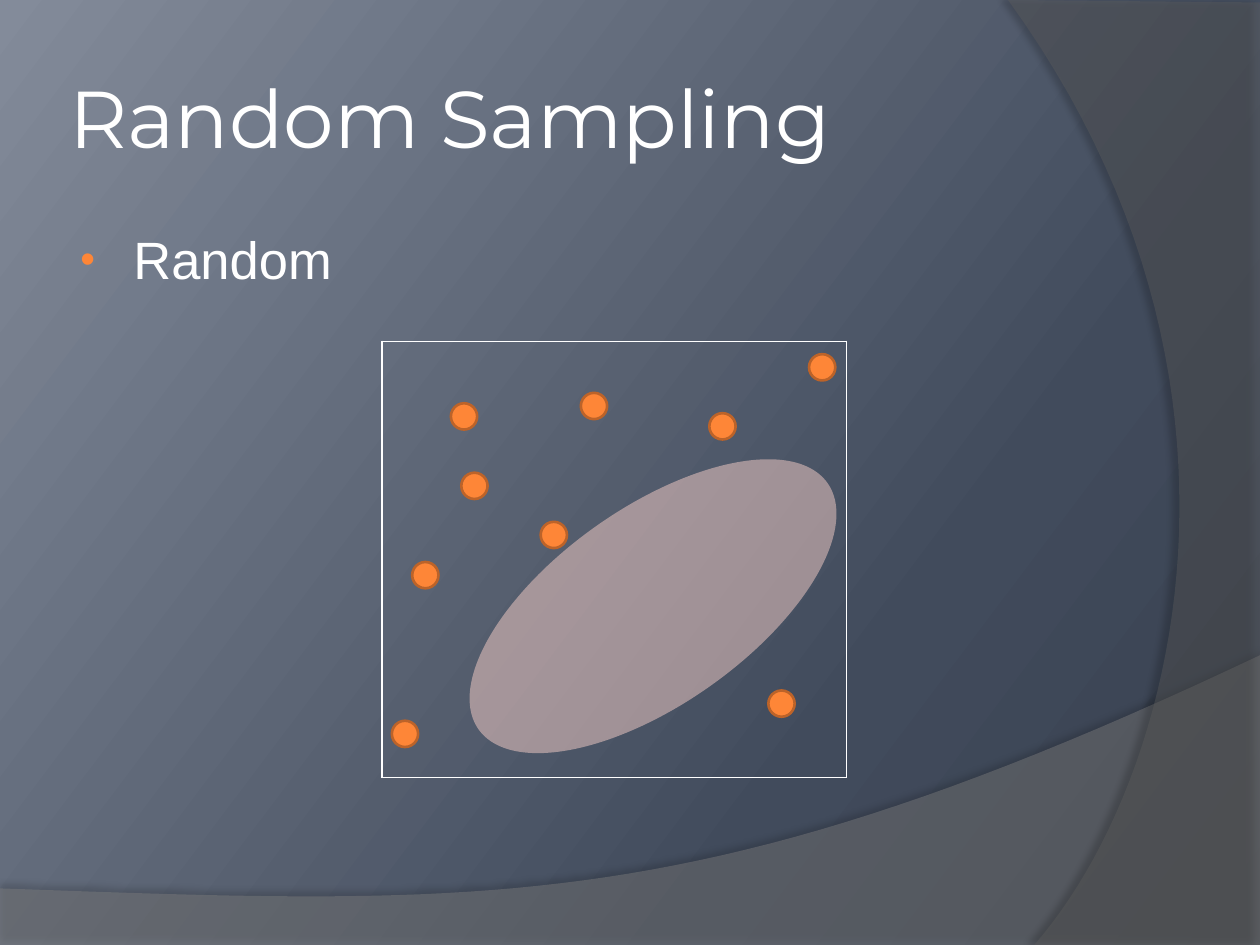
from lxml import etree
from pptx import Presentation
from pptx.dml.color import RGBColor
from pptx.enum.shapes import MSO_SHAPE
from pptx.enum.text import MSO_ANCHOR
from pptx.oxml.ns import qn
from pptx.util import Cm, Pt

OVAL = MSO_SHAPE.OVAL
TOP, MIDDLE = MSO_ANCHOR.TOP, MSO_ANCHOR.MIDDLE
PLAIN_TABLE_STYLE = "{2D5ABB26-0587-4C30-8999-92F81FD0307C}"
WHITE, ORANGE, DARK_ORANGE, PINK = "FFFFFF", "FE8637", "BC6329", "F8CFC8"
BACKGROUND_STOPS = [(0, "373F4D"), (30, "414B5C"), (100, "838B9A")]
DOT_SIZE = 0.53
DOTS = [
    (10.9, 10.52), (9.09, 8.13), (14.3, 8.33), (9.3, 9.53), (16.31, 7.14),
    (7.9, 14.53), (8.31, 11.33), (15.49, 13.92), (11.71, 7.92),
]


def rgb(color):
    """Turn a hex string into a colour."""
    return RGBColor.from_string(color)


def add_element(parent, tag, **attributes):
    """Append an XML element with the given attributes."""
    values = {name: str(value) for name, value in attributes.items()}
    return etree.SubElement(parent, qn(tag), values)


def add_color(parent, color, opacity=100):
    """Append a colour element, with its opacity in percent."""
    element = add_element(parent, "a:srgbClr", val=color)
    if opacity < 100:
        add_element(element, "a:alpha", val=opacity * 1000)


def set_background(slide, stops, angle):
    """Fill the background with a gradient at a clockwise angle."""
    fill = slide.background.fill
    fill.gradient()
    fill.gradient_angle = 360 - angle
    stop_list = next(slide.element.iter(qn("a:gsLst")))
    for stop in list(stop_list):
        stop_list.remove(stop)
    for position, color in stops:
        add_color(add_element(stop_list, "a:gs", pos=position * 1000), color)


def format_shape(shape, fill, opacity=100, line=None, line_width=1.5):
    """Set fill, opacity and outline, and drop the theme shadow."""
    shape.shadow.inherit = False
    shape.fill.solid()
    shape.fill.fore_color.rgb = rgb(fill)
    if opacity < 100:
        color = shape.element.spPr.find(qn("a:solidFill"))[0]
        add_element(color, "a:alpha", val=opacity * 1000)
    if line:
        shape.line.color.rgb = rgb(line)
        shape.line.width = Pt(line_width)
    else:
        shape.line.fill.background()


def curve_points(start, control_1, control_2, end, steps=48):
    """Return points along a cubic curve, without its start."""
    points = []
    for step in range(1, steps + 1):
        t = step / steps
        weights = ((1 - t) ** 3, 3 * t * (1 - t) ** 2, 3 * t * t * (1 - t), t ** 3)
        corners = (start, control_1, control_2, end)
        points.append(tuple(
            sum(weight * corner[axis] for weight, corner in zip(weights, corners))
            for axis in (0, 1)
        ))
    return points


def add_wave(slide, corners, curve, fill, opacity, shadow_opacity, distance, direction):
    """Add a translucent outline closed by a curve, with a soft shadow."""
    points = [
        (Cm(x), Cm(y)) for x, y in corners + curve_points(corners[-1], *curve)
    ]
    builder = slide.shapes.build_freeform(*points[0])
    builder.add_line_segments(points[1:], close=True)
    shape = builder.convert_to_shape()
    format_shape(shape, fill, opacity)
    shadow = add_element(
        shape.element.spPr.find(qn("a:effectLst")), "a:outerShdw",
        blurRad=Pt(4), dist=Pt(distance), dir=direction * 60000,
        algn="ctr", rotWithShape=0,
    )
    add_color(shadow, "000000", shadow_opacity)


def add_oval(slide, left, top, width, height, rotation=0, **look):
    """Add an ellipse."""
    shape = slide.shapes.add_shape(OVAL, Cm(left), Cm(top), Cm(width), Cm(height))
    shape.rotation = rotation
    format_shape(shape, **look)


def add_text(slide, text, left, top, width, height, *, size, font,
             color=WHITE, anchor=TOP, margin=0.25, space_before=0, bullet=None):
    """Add a text box with one paragraph, bulleted if a bullet colour is given."""
    box = slide.shapes.add_textbox(Cm(left), Cm(top), Cm(width), Cm(height))
    frame = box.text_frame
    frame.word_wrap = True
    frame.vertical_anchor = anchor
    frame.margin_left = frame.margin_right = Cm(margin)
    frame.margin_top = frame.margin_bottom = Cm(0.13)
    paragraph = frame.paragraphs[0]
    paragraph.space_before = Pt(space_before)
    run = paragraph.add_run()
    run.text = text
    run.font.size = Pt(size)
    run.font.name = font
    run.font.color.rgb = rgb(color)
    if bullet:
        properties = paragraph._p.get_or_add_pPr()
        properties.set("marL", str(Cm(1.17)))
        properties.set("indent", str(Cm(-1.07)))
        add_color(add_element(properties, "a:buClr"), bullet)
        add_element(properties, "a:buSzPct", val=80000)
        add_element(properties, "a:buFont", typeface=font)
        add_element(properties, "a:buChar", char="•")


def add_border(cell, color, width):
    """Draw a line on all four sides of a cell."""
    properties = cell._tc.get_or_add_tcPr()
    for tag in ("a:lnL", "a:lnR", "a:lnT", "a:lnB"):
        line = add_element(properties, tag, w=Pt(width))
        add_color(add_element(line, "a:solidFill"), color)


def add_frame_table(slide, left, top, column_widths, row_heights):
    """Add an unfilled table whose merged first row frames the sample area."""
    table = slide.shapes.add_table(
        len(row_heights), len(column_widths), Cm(left), Cm(top),
        Cm(sum(column_widths)), Cm(sum(row_heights)),
    ).table
    table.first_row = table.horz_banding = False
    next(table._tbl.iter(qn("a:tableStyleId"))).text = PLAIN_TABLE_STYLE
    for column, width in zip(table.columns, column_widths):
        column.width = Cm(width)
    for row, height in zip(table.rows, row_heights):
        row.height = Cm(height)
    last_column = len(column_widths) - 1
    table.cell(0, 0).merge(table.cell(0, last_column))
    for cell in table.rows[0].cells:
        add_border(cell, WHITE, 1)
    for row in table.rows:
        for cell in row.cells:
            cell.fill.background()


def main():
    """Build the slide and save it."""
    presentation = Presentation()
    presentation.slide_width, presentation.slide_height = Cm(25.4), Cm(19.05)
    slide = presentation.slides.add_slide(presentation.slide_layouts[6])
    set_background(slide, BACKGROUND_STOPS, 217)
    add_wave(
        slide, [(0, 17.91), (0, 19.08), (25.4, 19.08), (25.4, 13.21)],
        [(14.2, 18.52), (9.93, 18.26), (0, 17.91)],
        "7F7F7F", 45, shadow_opacity=35, distance=3.5, direction=270,
    )
    add_wave(
        slide, [(25.4, 0.05), (25.4, 19.05), (20.85, 19.05)],
        [(23.75, 15.72), (25.86, 7.62), (20.32, 0)],
        "5E5E5E", 40, shadow_opacity=45, distance=4, direction=180,
    )
    add_text(slide, "Random Sampling", 1.27, 0.76, 21.82, 3.18,
             size=46, font="Montserrat", anchor=MIDDLE, margin=0.13)
    add_text(slide, "Random", 1.27, 4.45, 20.75, 2.08,
             size=30, font="Arial", space_before=6, bullet=ORANGE)
    add_frame_table(slide, 7.7, 6.88, [3.12] * 3, [8.79, 2.92])
    for left, top in DOTS:
        add_oval(slide, left, top, DOT_SIZE, DOT_SIZE, fill=ORANGE, line=DARK_ORANGE)
    add_oval(slide, 8.86, 10.52 - 0.28, 8.61, 3.96, rotation=324.8, fill=PINK, opacity=50)
    presentation.save("out.pptx")


if __name__ == "__main__":
    main()
